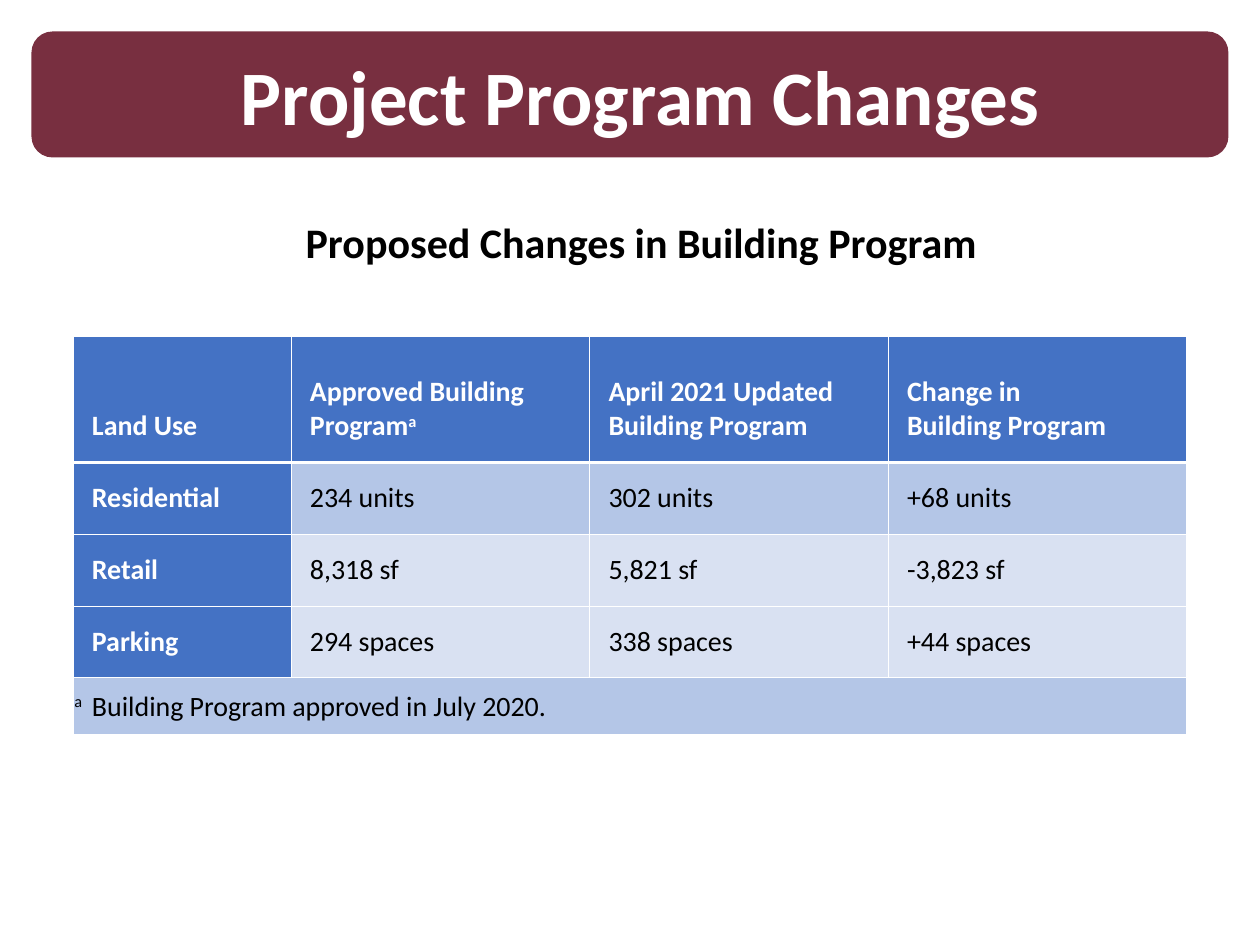
"""Build the Project Program Changes slide with its building program table."""
from dataclasses import dataclass

from lxml.etree import SubElement
from pptx import Presentation
from pptx.dml.color import RGBColor
from pptx.enum.shapes import MSO_SHAPE as Shape
from pptx.enum.text import MSO_ANCHOR as Anchor, PP_ALIGN as Align
from pptx.oxml.ns import qn
from pptx.slide import Slide
from pptx.table import _Cell as Cell
from pptx.util import Inches, Pt

FONT = "Calibri"
WHITE = RGBColor(0xFF, 0xFF, 0xFF)
BLACK = RGBColor(0x00, 0x00, 0x00)
MAROON = RGBColor(0x78, 0x2F, 0x40)
BLUE = RGBColor(0x44, 0x72, 0xC4)
MID_BLUE = RGBColor(0xB4, 0xC6, 0xE7)
PALE_BLUE = RGBColor(0xD9, 0xE1, 0xF2)


@dataclass(frozen=True)
class CellStyle:
    fill: RGBColor
    color: RGBColor
    bold: bool = False


HEADING = CellStyle(BLUE, WHITE, True)
FIRST_ROW = CellStyle(MID_BLUE, BLACK)
OTHER_ROW = CellStyle(PALE_BLUE, BLACK)

ROWS = [
    ("Land Use", "Approved Building Program", "April 2021 Updated Building Program",
     "Change in\vBuilding Program"),
    ("Residential", "234 units", "302 units", "+68 units"),
    ("Retail", "8,318 sf", "5,821 sf", "-3,823 sf"),
    ("Parking", "294 spaces", "338 spaces", "+44 spaces"),
]
COLUMN_WIDTHS = [1.73, 2.37, 2.37, 2.37]
ROW_HEIGHTS = [1, 0.57, 0.57, 0.57, 0.45]
NOTE_ROW = len(ROWS)


def format_paragraph(para, size: float, color: RGBColor, bold: bool) -> None:
    """Set the font of a whole paragraph."""
    para.font.name = FONT
    para.font.size = Pt(size)
    para.font.bold = bold
    para.font.color.rgb = color


def add_superscript(para, text: str) -> None:
    """Append a raised run to a paragraph."""
    span = para.add_run()
    span.text = text
    span.font._element.set("baseline", "30000")


def add_border(cell: Cell, side: str, width: float) -> None:
    """Draw one white cell border."""
    line = SubElement(cell._tc.get_or_add_tcPr(), qn(f"a:{side}"), w=str(Pt(width)))
    fill = SubElement(line, qn("a:solidFill"))
    SubElement(fill, qn("a:srgbClr"), val=str(WHITE))


def style_cell(cell: Cell, row: int, style: CellStyle) -> None:
    """Give a cell its borders, fill, insets and font."""
    for side, edge_row in (("lnL", None), ("lnR", None), ("lnT", 1), ("lnB", 0)):
        add_border(cell, side, 1.5 if row == edge_row else 0.5)
    cell.fill.solid()
    cell.fill.fore_color.rgb = style.fill
    cell.vertical_anchor = Anchor.BOTTOM
    cell.margin_left = cell.margin_right = Inches(0.15)
    cell.margin_top = cell.margin_bottom = Inches(0.15)
    format_paragraph(cell.text_frame.paragraphs[0], 16, style.color, style.bold)


def add_banner(page: Slide) -> None:
    """Place the title over a maroon banner."""
    banner = page.shapes.add_shape(
        Shape.DOUBLE_BRACKET, Inches(0.25), Inches(0.25), Inches(9.5), Inches(1))
    banner.shadow.inherit = False
    banner.fill.solid()
    banner.fill.fore_color.rgb = MAROON
    banner.line.fill.background()
    title = page.shapes.title
    title.element.addprevious(banner.element)
    title.left, title.top = Inches(0.92), Inches(0.33)
    title.width, title.height = Inches(8.33), Inches(0.84)
    title.text_frame.text = "Project Program Changes"
    title.text_frame.vertical_anchor = Anchor.MIDDLE
    para = title.text_frame.paragraphs[0]
    para.alignment = Align.CENTER
    format_paragraph(para, 44, WHITE, True)


def add_subtitle(page: Slide) -> None:
    """Add the centred table heading."""
    box = page.shapes.add_textbox(Inches(0.42), Inches(1.67), Inches(9.34), Inches(0.81))
    box.text_frame.word_wrap = True
    para = box.text_frame.paragraphs[0]
    para.text = "Proposed Changes in Building Program"
    para.alignment = Align.CENTER
    format_paragraph(para, 24, BLACK, True)


def add_note(cell: Cell) -> None:
    """Write the table footnote with a hanging indent."""
    cell.vertical_anchor = Anchor.MIDDLE
    cell.margin_left = cell.margin_right = cell.margin_top = Inches(0.01)
    cell.margin_bottom = 0
    para = cell.text_frame.paragraphs[0]
    indent = Inches(0.14)
    properties = para._p.get_or_add_pPr()
    properties.set("marL", str(indent))
    properties.set("indent", str(-indent))
    add_superscript(para, "a")
    para.add_run().text = "\tBuilding Program approved in July 2020."


def add_program_table(page: Slide) -> None:
    """Add the building program comparison."""
    table = page.shapes.add_table(
        len(ROW_HEIGHTS), len(COLUMN_WIDTHS), Inches(0.58), Inches(2.67),
        Inches(sum(COLUMN_WIDTHS)), Inches(sum(ROW_HEIGHTS))).table
    for column, width in zip(table.columns, COLUMN_WIDTHS):
        column.width = Inches(width)
    for row, height in zip(table.rows, ROW_HEIGHTS):
        row.height = Inches(height)
    for row, texts in enumerate(ROWS):
        body = FIRST_ROW if row == 1 else OTHER_ROW
        for column, text in enumerate(texts):
            cell = table.cell(row, column)
            cell.text = text
            style_cell(cell, row, HEADING if row == 0 or column == 0 else body)
    add_superscript(table.cell(0, 1).text_frame.paragraphs[0], "a")
    note = table.cell(NOTE_ROW, 0)
    note.merge(table.cell(NOTE_ROW, len(COLUMN_WIDTHS) - 1))
    style_cell(note, NOTE_ROW, FIRST_ROW)
    add_note(note)


def main() -> None:
    """Build and save the deck."""
    deck = Presentation()
    deck.slide_width, deck.slide_height = Inches(10), Inches(7.5)
    page = deck.slides.add_slide(deck.slide_layouts[5])
    add_banner(page)
    add_subtitle(page)
    add_program_table(page)
    deck.save("out.pptx")


if __name__ == "__main__":
    main()
